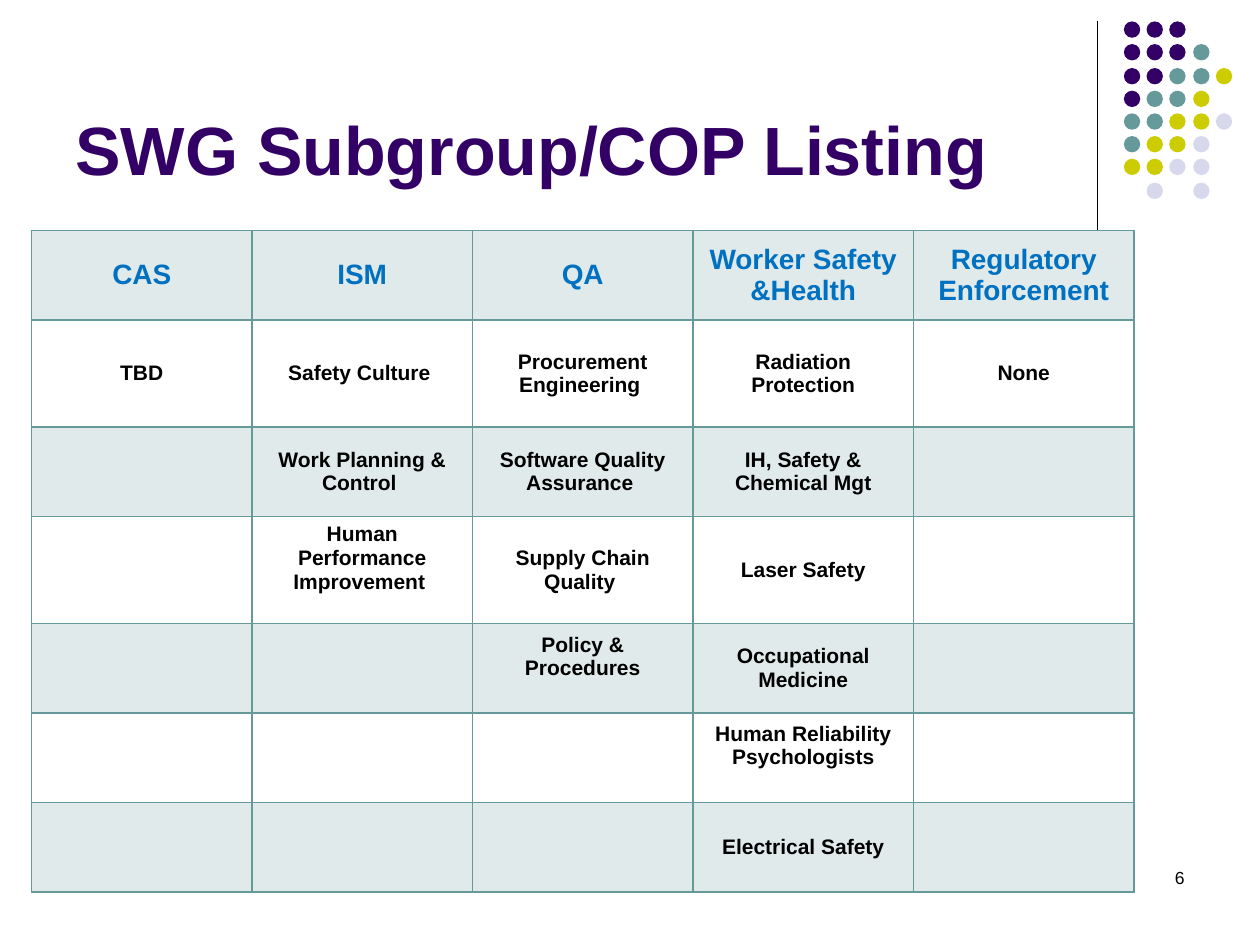
from dataclasses import dataclass

import lxml.etree
import pptx
import pptx.dml.color
import pptx.enum.shapes
import pptx.enum.text
import pptx.oxml.ns
import pptx.util

PX = 9144
COLORS = {
    "purple": "330066",
    "teal": "669999",
    "olive": "CCCC00",
    "lavender": "D8D8EC",
    "heading": "0070C0",
    "black": "000000",
}
DOT_COLORS = {"P": "purple", "T": "teal", "Y": "olive", "L": "lavender"}
DOT_ROWS = ["PPP", "PPPT", "PPTTY", "PTTY", "TTYYL", "TYYL", "YYLL", " L L"]
DOT_LEFT, DOT_TOP, DOT_SIZE, DOT_PITCH = 892, 17, 13, 18.25

COLUMN_WIDTH = 175
ROW_HEIGHTS = [71, 85, 71, 85, 71, 71, 71]
SUBGROUPS = [
    ["CAS", "ISM", "QA", "Worker Safety &Health", "Regulatory Enforcement"],
    ["TBD", "Safety Culture ", "Procurement Engineering ", "Radiation Protection", "None"],
    ["", "Work Planning & Control ", "Software Quality Assurance ", "IH, Safety & Chemical Mgt", ""],
    ["", "Human Performance Improvement ", "Supply Chain Quality ", "Laser Safety", ""],
    ["", "", "Policy & Procedures", "Occupational Medicine", ""],
    ["", "", "", "Human Reliability Psychologists", ""],
    ["", "", "", "Electrical Safety", ""],
]
RAISED = {"Human Performance Improvement ", "Policy & Procedures", "Human Reliability Psychologists"}

ALIGN = pptx.enum.text.PP_ALIGN
ANCHOR = pptx.enum.text.MSO_ANCHOR


@dataclass
class Label:
    text: str
    left: int
    top: int
    width: int
    height: int
    size: int
    color: str
    bold: bool
    align: ALIGN
    anchor: ANCHOR


LABELS = [
    Label("SWG Subgroup/COP Listing", 50, 13, 825, 142, 39, "purple", True, ALIGN.LEFT, ANCHOR.BOTTOM),
    Label("6", 717, 683, 233, 50, 10, "black", False, ALIGN.RIGHT, ANCHOR.TOP),
]


def px(length: float) -> int:
    return round(length) * PX


def rgb(color: str) -> pptx.dml.color.RGBColor:
    return pptx.dml.color.RGBColor.from_string(COLORS[color])


def style_paragraph(paragraph, size: int, color: str, bold: bool, align: ALIGN) -> None:
    paragraph.alignment = align
    paragraph.font.name = "Arial"
    paragraph.font.size = pptx.util.Pt(size)
    paragraph.font.bold = bold
    paragraph.font.color.rgb = rgb(color)


def add_label(slide, label: Label) -> None:
    box = slide.shapes.add_textbox(px(label.left), px(label.top), px(label.width), px(label.height))
    frame = box.text_frame
    frame.word_wrap = True
    frame.vertical_anchor = label.anchor
    frame.text = label.text
    style_paragraph(frame.paragraphs[0], label.size, label.color, label.bold, label.align)


def add_divider(slide) -> None:
    divider = slide.shapes.add_connector(
        pptx.enum.shapes.MSO_CONNECTOR.STRAIGHT, px(871), px(17), px(871), px(183))
    divider.line.color.rgb = rgb("black")
    divider.line.width = pptx.util.Pt(0.75)
    lxml.etree.SubElement(divider._element.spPr, pptx.oxml.ns.qn("a:effectLst"))


def add_dots(slide) -> None:
    for row, pattern in enumerate(DOT_ROWS):
        for column, key in enumerate(pattern):
            if key == " ":
                continue
            dot = slide.shapes.add_shape(
                pptx.enum.shapes.MSO_SHAPE.OVAL,
                px(DOT_LEFT + column * DOT_PITCH), px(DOT_TOP + row * DOT_PITCH),
                px(DOT_SIZE), px(DOT_SIZE))
            dot.shadow.inherit = False
            dot.fill.solid()
            dot.fill.fore_color.rgb = rgb(DOT_COLORS[key])
            dot.line.fill.background()


def add_solid_fill(parent, color: str):
    fill = lxml.etree.SubElement(parent, pptx.oxml.ns.qn("a:solidFill"))
    return lxml.etree.SubElement(fill, pptx.oxml.ns.qn("a:srgbClr"), val=COLORS[color])


def style_cell(cell, text: str, row: int) -> None:
    cell.text = text
    cell.vertical_anchor = ANCHOR.MIDDLE
    cell.margin_left = cell.margin_right = px(10)
    cell.margin_top = px(5)
    cell.margin_bottom = px(24 if text in RAISED else 5)
    size, color = (16, "heading") if row == 0 else (12, "black")
    style_paragraph(cell.text_frame.paragraphs[0], size, color, True, ALIGN.CENTER)

    properties = cell._tc.get_or_add_tcPr()
    for side in ("a:lnL", "a:lnR", "a:lnT", "a:lnB"):
        border = lxml.etree.SubElement(properties, pptx.oxml.ns.qn(side), w=str(pptx.util.Pt(1)))
        add_solid_fill(border, "teal")
    if row % 2 == 0:
        tint = add_solid_fill(properties, "teal")
        lxml.etree.SubElement(tint, pptx.oxml.ns.qn("a:alpha"), val="20000")
    else:
        cell.fill.background()


def add_subgroup_table(slide) -> None:
    columns = len(SUBGROUPS[0])
    table = slide.shapes.add_table(
        len(SUBGROUPS), columns, px(25), px(183),
        px(columns * COLUMN_WIDTH), px(sum(ROW_HEIGHTS))).table
    table.first_row = table.horz_banding = False
    for column in table.columns:
        column.width = px(COLUMN_WIDTH)
    for row, (height, texts) in enumerate(zip(ROW_HEIGHTS, SUBGROUPS)):
        table.rows[row].height = px(height)
        for column, text in enumerate(texts):
            style_cell(table.cell(row, column), text, row)


def main() -> None:
    deck = pptx.Presentation()
    deck.slide_width, deck.slide_height = px(1000), px(750)
    slide = deck.slides.add_slide(deck.slide_layouts[6])
    add_divider(slide)
    add_dots(slide)
    add_subgroup_table(slide)
    for label in LABELS:
        add_label(slide, label)
    deck.save("out.pptx")


if __name__ == "__main__":
    main()
